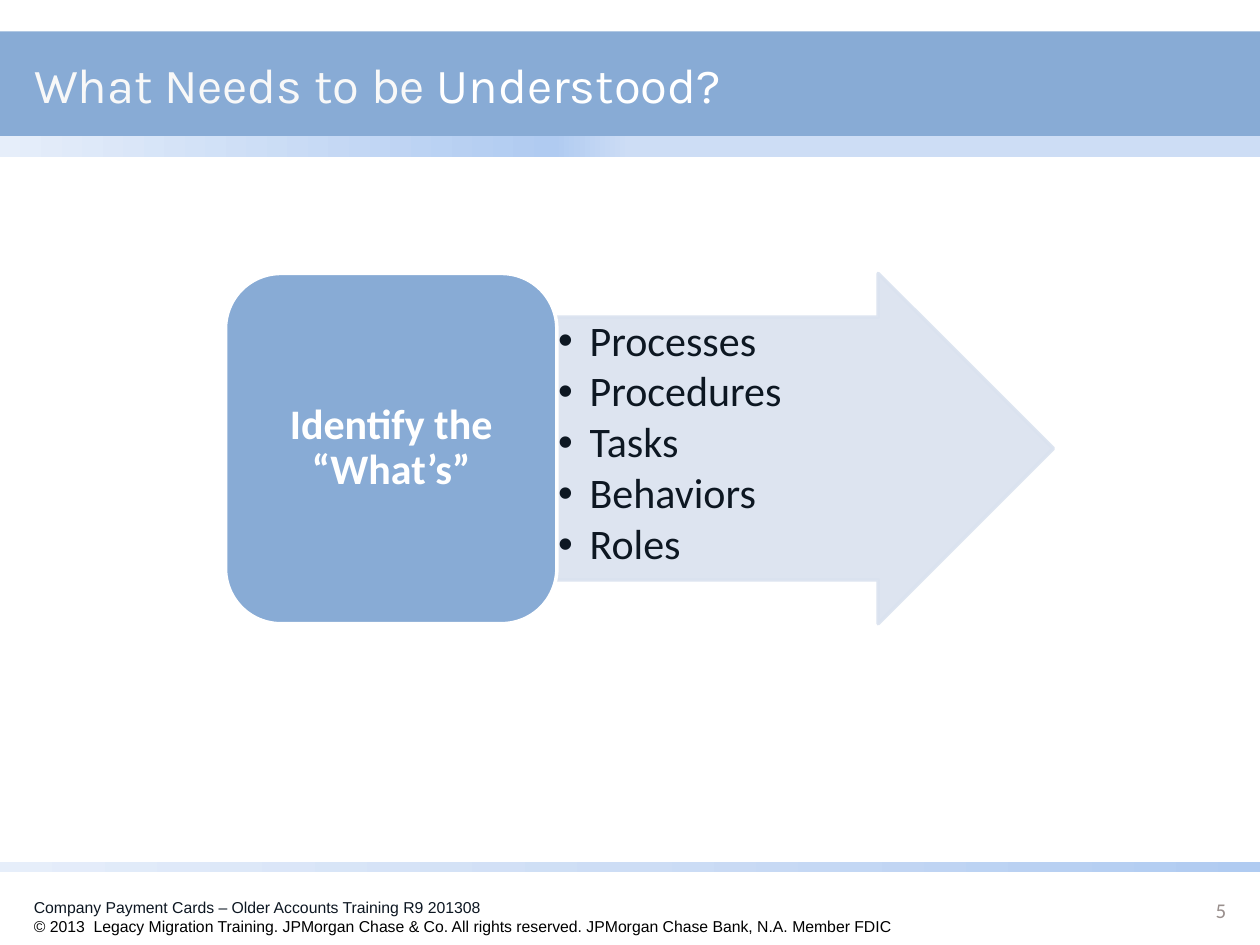
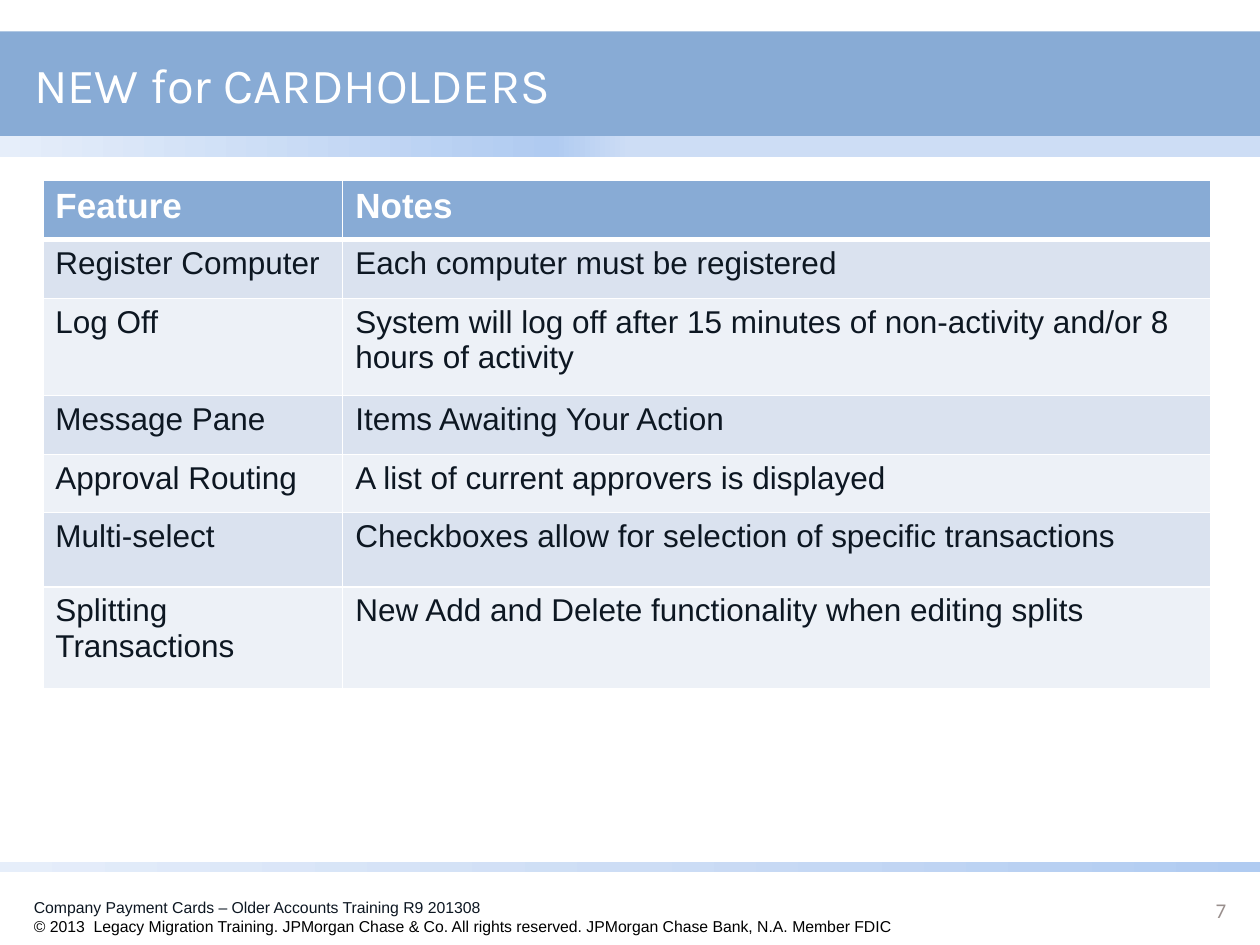
from dataclasses import dataclass

from lxml.etree import SubElement
from pptx import Presentation
from pptx.dml.color import RGBColor
from pptx.enum.shapes import MSO_SHAPE
from pptx.enum.text import MSO_ANCHOR, MSO_AUTO_SIZE, PP_ALIGN
from pptx.oxml import parse_xml
from pptx.oxml.ns import nsdecls, qn
from pptx.util import Inches, Pt


@dataclass(frozen=True)
class Theme:
    blue: str = "88ABD5"
    sky: str = "B0CBF1"
    pale: str = "CDDDF5"
    mist: str = "E6EEFA"
    arrow: str = "DAE2EF"
    light: str = "EDF1F7"
    white: str = "FFFFFF"
    snow: str = "F8F8F8"
    ink: str = "0D1722"
    black: str = "000000"
    gray: str = "998F8D"
    head: str = "Karla"
    body: str = "Calibri"
    sans: str = "Arial"
    title: int = 28
    large: int = 24
    label: int = 20
    cell: int = 18
    page: int = 12
    small: int = 9


THEME = Theme()
FOOTER = [
    ("Company Payment Cards – Older Accounts Training R9 201308", THEME.ink),
    ("© 2013  Legacy Migration Training. JPMorgan Chase & Co. All rights reserved. "
     "JPMorgan Chase Bank, N.A. Member FDIC", THEME.black),
]
TOPICS = ["Processes", "Procedures", "Tasks", "Behaviors", "Roles"]
FEATURES = [
    ("Feature", "Notes"),
    ("Register Computer", "Each computer must be registered"),
    ("Log Off", "System will log off after 15 minutes of non-activity "
                "and/or 8 hours of activity"),
    ("Message Pane", "Items Awaiting Your Action"),
    ("Approval Routing", "A list of current approvers is displayed"),
    ("Multi-select", "Checkboxes allow for selection of specific transactions"),
    ("Splitting Transactions", "New Add and Delete functionality when editing splits"),
]
WIDTHS = [2.38, 6.89]
HEIGHTS = [0.47, 0.47, 0.77, 0.47, 0.46, 0.59, 0.81]


def rgb(code):
    return RGBColor.from_string(code)


def style(item, face, size, color, bold=False):
    """Format the font of a run or a paragraph."""
    font = item.font
    font.name, font.size, font.bold = face, Pt(size), bold
    font.color.rgb = rgb(color)


def add_box(slide, kind, place, fill, line=None):
    shape = slide.shapes.add_shape(kind, *map(Inches, place))
    shape.shadow.inherit = False
    shape.fill.solid()
    shape.fill.fore_color.rgb = rgb(fill)
    if line:
        shape.line.color.rgb = rgb(line)
        shape.line.width = Pt(2)
    else:
        shape.line.fill.background()
    return shape


def add_strip(slide, place, stops):
    """Add a band that fades from left to right through (percent, colour) stops."""
    strip = add_box(slide, MSO_SHAPE.RECTANGLE, place, THEME.pale)
    strip.fill.gradient()
    strip.fill.gradient_angle = 0
    items = strip.fill._fill._gradFill.find(qn("a:gsLst"))
    items.clear()
    for percent, color in stops:
        stop = SubElement(items, qn("a:gs"), pos=str(percent * 1000))
        SubElement(stop, qn("a:srgbClr"), val=color)


def add_text(slide, place):
    frame = slide.shapes.add_textbox(*map(Inches, place)).text_frame
    frame.word_wrap = True
    return frame


def add_title(slide, parts):
    title = slide.shapes.title
    title.left, title.top = Inches(0.17), Inches(0.25)
    title.width, title.height = Inches(9), Inches(0.83)
    slide.shapes._spTree.append(title._element)
    frame = title.text_frame
    frame.auto_size = MSO_AUTO_SIZE.NONE
    frame.vertical_anchor = MSO_ANCHOR.MIDDLE
    para = frame.paragraphs[0]
    para.alignment = PP_ALIGN.LEFT
    for text, color in parts:
        run = para.add_run()
        run.text = text
        style(run, THEME.head, THEME.title, color)


def add_footer(slide, page):
    frame = add_text(slide, (0.17, 7.08, 7.41, 0.4))
    frame.text = "\n".join(text for text, _ in FOOTER)
    for para, (_, color) in zip(frame.paragraphs, FOOTER):
        style(para.runs[0], THEME.sans, THEME.small, color)

    frame = add_text(slide, (7.5, 7.02, 2.33, 0.4))
    frame.vertical_anchor = MSO_ANCHOR.MIDDLE
    frame.text = str(page)
    para = frame.paragraphs[0]
    para.alignment = PP_ALIGN.RIGHT
    style(para.runs[0], THEME.body, THEME.page, THEME.gray)


def add_slide(deck, page, *parts):
    """Add a slide with bands, title and footer; parts are (text, colour) pairs."""
    slide = deck.slides.add_slide(deck.slide_layouts[5])
    add_box(slide, MSO_SHAPE.RECTANGLE, (0, 0.25, 10, 0.83), THEME.blue)
    add_strip(slide, (0, 1.08, 10, 0.17),
              [(0, THEME.mist), (44, THEME.sky), (50, THEME.pale), (100, THEME.pale)])
    add_strip(slide, (0, 6.84, 10, 0.08),
              [(0, THEME.mist), (50, THEME.pale), (100, THEME.sky)])
    add_title(slide, parts)
    add_footer(slide, page)
    return slide


def add_bullet(para):
    props = para._p.get_or_add_pPr()
    props.set("marL", str(Inches(0.25)))
    props.set("indent", str(-Inches(0.25)))
    SubElement(props, qn("a:buFont"), typeface=THEME.sans)
    SubElement(props, qn("a:buChar"), char="•")


def add_arrow(slide, place, topics):
    arrow = add_box(slide, MSO_SHAPE.RIGHT_ARROW, place, THEME.arrow, THEME.arrow)
    arrow.adjustments[0], arrow.adjustments[1] = 0.75, 0.5
    for color in arrow._element.spPr.iter(qn("a:srgbClr")):
        SubElement(color, qn("a:alpha"), val="90000")
    frame = arrow.text_frame
    frame.margin_left = frame.margin_right = Inches(0.02)
    frame.margin_top = frame.margin_bottom = Inches(0.02)
    frame.vertical_anchor = MSO_ANCHOR.TOP
    frame.text = "\n".join(topics)
    for para in frame.paragraphs:
        add_bullet(para)
        para.alignment = PP_ALIGN.LEFT
        para.line_spacing, para.space_after = 0.9, Pt(3.2)
        style(para.runs[0], THEME.body, THEME.large, THEME.ink)


def add_card(slide, place, text):
    card = add_box(slide, MSO_SHAPE.ROUNDED_RECTANGLE, place, THEME.blue, THEME.white)
    frame = card.text_frame
    frame.vertical_anchor = MSO_ANCHOR.MIDDLE
    frame.text = text
    para = frame.paragraphs[0]
    para.alignment, para.line_spacing = PP_ALIGN.CENTER, 0.9
    style(para.runs[0], THEME.body, THEME.large, THEME.white, True)


def set_edges(cell, top, bottom):
    """Draw white cell borders; top and bottom are widths in points."""
    props = cell._tc.get_or_add_tcPr()
    for spot, (side, width) in enumerate(zip("LRTB", (1, 1, top, bottom))):
        props.insert(spot, parse_xml(
            f'<a:ln{side} {nsdecls("a")} w="{Pt(width)}"><a:solidFill>'
            f'<a:srgbClr val="{THEME.white}"/></a:solidFill></a:ln{side}>'))


def add_grid(slide, left, top, rows):
    frame = slide.shapes.add_table(
        len(rows), len(WIDTHS), Inches(left), Inches(top),
        Inches(sum(WIDTHS)), Inches(sum(HEIGHTS)))
    table = frame.table
    for column, width in zip(table.columns, WIDTHS):
        column.width = Inches(width)
    for r, (texts, height) in enumerate(zip(rows, HEIGHTS)):
        table.rows[r].height = Inches(height)
        head = r == 0
        fill = THEME.blue if head else (THEME.light, THEME.arrow)[r % 2]
        for c, text in enumerate(texts):
            cell = table.cell(r, c)
            cell.text = text
            cell.fill.solid()
            cell.fill.fore_color.rgb = rgb(fill)
            set_edges(cell, 3 if r == 1 else 1, 3 if head else 1)
            style(cell.text_frame.paragraphs[0].runs[0], THEME.sans,
                  THEME.label if head else THEME.cell,
                  THEME.white if head else THEME.ink, head)


def main():
    deck = Presentation()
    deck.slide_width, deck.slide_height = Inches(10), Inches(7.5)

    slide = add_slide(deck, 5, ("What Needs to be ", THEME.snow),
                      ("Understood?", THEME.white))
    add_arrow(slide, (4.41, 2.17, 3.95, 2.78), TOPICS)
    add_card(slide, (1.79, 2.17, 2.63, 2.78), "Identify the “What’s”")

    slide = add_slide(deck, 7, ("NEW for CARDHOLDERS", THEME.white))
    add_grid(slide, 0.34, 1.43, FEATURES)

    deck.save("out.pptx")


if __name__ == "__main__":
    main()
